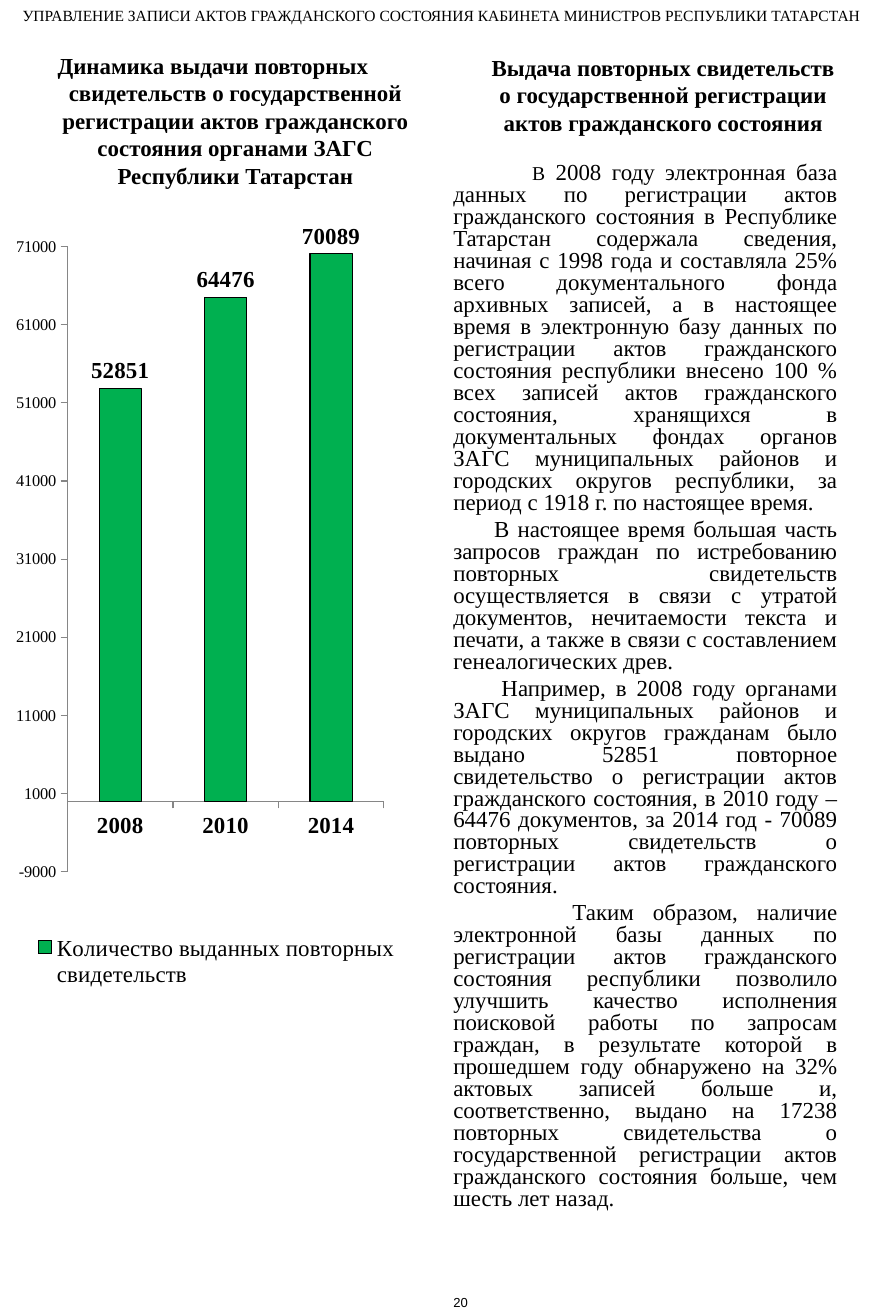
import pptx
import pptx.util
import pptx.chart.data
import pptx.dml.color
import pptx.enum.chart
import pptx.enum.text
import pptx.oxml

Cm = pptx.util.Cm
Pt = pptx.util.Pt
Align = pptx.enum.text.PP_ALIGN
Anchor = pptx.enum.text.MSO_ANCHOR

THEME = {
    "serif": "Times New Roman",
    "sans": "Arial",
    "text": pptx.dml.color.RGBColor(0, 0, 0),
    "bar": pptx.dml.color.RGBColor(0x00, 0xB0, 0x50),
    "axis": pptx.dml.color.RGBColor(0x86, 0x86, 0x86),
    "main_size": 14,
    "small_size": 12,
    "axis_size": 10,
    "header_size": 9.5,
    "page_size": 8,
}

HEADER = "УПРАВЛЕНИЕ ЗАПИСИ АКТОВ ГРАЖДАНСКОГО СОСТОЯНИЯ КАБИНЕТА МИНИСТРОВ РЕСПУБЛИКИ ТАТАРСТАН"
CHART_TITLE = (
    "Динамика выдачи повторных свидетельств о государственной регистрации "
    "актов гражданского состояния органами ЗАГС Республики Татарстан"
)
ARTICLE_TITLE = (
    "Выдача повторных свидетельств\v"
    "о государственной регистрации актов гражданского состояния"
)
PAGE_NUMBER = "20"
FIRST_LETTER = "В"
ARTICLE = [
    (1.7, "В 2008 году электронная база данных по регистрации актов гражданского "
          "состояния в Республике Татарстан содержала сведения, начиная с 1998 года "
          "и составляла 25% всего документального фонда архивных записей, "
          "а в настоящее время в электронную базу данных по регистрации актов "
          "гражданского состояния республики внесено 100 % всех записей актов "
          "гражданского состояния, хранящихся в документальных фондах органов ЗАГС "
          "муниципальных районов и городских округов республики, "
          "за период с 1918 г. по настоящее время."),
    (0.88, "В настоящее время большая часть запросов граждан по истребованию "
           "повторных свидетельств осуществляется в связи с утратой документов, "
           "нечитаемости текста и печати, а также в связи с составлением "
           "генеалогических древ."),
    (1.04, "Например, в 2008 году органами ЗАГС муниципальных районов и городских "
           "округов гражданам было выдано 52851 повторное свидетельство о регистрации "
           "актов гражданского состояния, в 2010 году – 64476 документов, "
           "за 2014 год - 70089 повторных свидетельств о регистрации актов "
           "гражданского состояния."),
    (2.57, "Таким образом, наличие электронной базы данных по регистрации актов "
           "гражданского состояния республики позволило улучшить качество исполнения "
           "поисковой работы по запросам граждан, в результате которой в прошедшем "
           "году обнаружено на 32% актовых записей больше и, соответственно, выдано "
           "на 17238 повторных свидетельства о государственной регистрации актов "
           "гражданского состояния больше, чем шесть лет назад."),
]
SERIES_NAME = "Количество выданных повторных свидетельств"
ISSUED = {"2008": 52851, "2010": 64476, "2014": 70089}

PLOT_LAYOUT = (0.153, 0.031, 0.716, 0.804)
LEGEND_LAYOUT = (0.06, 0.91, 0.86, 0.08)


def set_font(font, size, bold=False, name=THEME["serif"]):
    font.name = name
    font.size = Pt(size)
    font.bold = bold
    font.color.rgb = THEME["text"]


def set_indent(paragraph, first_line, left=0):
    properties = paragraph._p.get_or_add_pPr()
    properties.set("marL", str(Cm(left)))
    properties.set("indent", str(Cm(first_line)))


def add_text(slide, box, lines, size, bold=False, name=THEME["serif"],
             align=Align.CENTER, anchor=Anchor.TOP):
    frame = slide.shapes.add_textbox(*[Cm(length) for length in box]).text_frame
    frame.word_wrap = True
    frame.vertical_anchor = anchor
    frame.text = "\n".join(lines)
    for paragraph in frame.paragraphs:
        paragraph.alignment = align
        for run in paragraph.runs:
            set_font(run.font, size, bold, name)
    return frame


def add_article(slide, box):
    frame = add_text(slide, box, [line for _, line in ARTICLE],
                     THEME["main_size"], align=Align.JUSTIFY)
    for paragraph, (first_line, _) in zip(frame.paragraphs, ARTICLE):
        paragraph.line_spacing = 0.8
        paragraph.space_before = Pt(3.1)
        set_indent(paragraph, first_line)
    opening = frame.paragraphs[0]
    first_run = opening.runs[0]
    rest = opening.add_run()
    rest.text = first_run.text[len(FIRST_LETTER):]
    set_font(rest.font, THEME["main_size"])
    first_run.text = FIRST_LETTER
    first_run.font.size = Pt(THEME["small_size"])


def make_layout(box, target=""):
    places = "".join(f'<c:{key}Mode val="edge"/>' for key in "xy")
    places += "".join(f'<c:{key} val="{value}"/>' for key, value in zip("xywh", box))
    return pptx.oxml.parse_xml(
        '<c:layout xmlns:c="http://schemas.openxmlformats.org/drawingml/2006/chart">'
        f"<c:manualLayout>{target}{places}</c:manualLayout></c:layout>"
    )


def replace_layout(parent, layout, position):
    for old in parent.xpath("c:layout"):
        parent.remove(old)
    parent.insert(position, layout)


def add_issue_chart(slide, box):
    data = pptx.chart.data.CategoryChartData()
    data.categories = list(ISSUED)
    data.add_series(SERIES_NAME, list(ISSUED.values()))
    chart = slide.shapes.add_chart(
        pptx.enum.chart.XL_CHART_TYPE.COLUMN_CLUSTERED,
        *[Cm(length) for length in box], data).chart
    chart.has_title = False
    set_font(chart.font, THEME["main_size"])

    category_axis, value_axis = chart.category_axis, chart.value_axis
    set_font(category_axis.tick_labels.font, THEME["main_size"], True)
    set_font(value_axis.tick_labels.font, THEME["axis_size"])
    value_axis.minimum_scale = -9000
    value_axis.maximum_scale = 71000
    value_axis.major_unit = 10000
    value_axis.has_major_gridlines = False
    for axis in (category_axis, value_axis):
        axis.major_tick_mark = pptx.enum.chart.XL_TICK_MARK.OUTSIDE
        axis.format.line.color.rgb = THEME["axis"]
        axis.format.line.width = Pt(0.75)

    plot = chart.plots[0]
    plot.vary_by_categories = False
    plot.gap_width = 150
    bars = plot.series[0].format
    bars.fill.solid()
    bars.fill.fore_color.rgb = THEME["bar"]
    bars.line.color.rgb = THEME["text"]
    bars.line.width = Pt(0.75)
    plot.has_data_labels = True
    labels = plot.data_labels
    labels.show_value = True
    labels.position = pptx.enum.chart.XL_LABEL_POSITION.OUTSIDE_END
    set_font(labels.font, THEME["main_size"], True)

    chart.has_legend = True
    chart.legend.position = pptx.enum.chart.XL_LEGEND_POSITION.BOTTOM
    chart.legend.include_in_layout = False
    set_font(chart.legend.font, THEME["main_size"])
    plot_area = chart._chartSpace.xpath("c:chart/c:plotArea")[0]
    legend = chart._chartSpace.xpath("c:chart/c:legend")[0]
    replace_layout(plot_area, make_layout(PLOT_LAYOUT, '<c:layoutTarget val="inner"/>'), 0)
    replace_layout(legend, make_layout(LEGEND_LAYOUT), 1)


def main():
    presentation = pptx.Presentation()
    presentation.slide_width = Cm(19.05)
    presentation.slide_height = Cm(28.4)
    slide = presentation.slides.add_slide(presentation.slide_layouts[6])

    add_text(slide, (10.13, 0.99, 8.36, 2.11), [ARTICLE_TITLE],
             THEME["main_size"], bold=True, anchor=Anchor.MIDDLE)
    add_article(slide, (9.53, 3.4, 8.79, 24))
    chart_title = add_text(slide, (0, 0.99, 9.19, 3.25), [CHART_TITLE],
                           THEME["main_size"], bold=True)
    set_indent(chart_title.paragraphs[0], -0.97, left=0.97)
    add_text(slide, (9.53, 27.8, 0.99, 0.6), [PAGE_NUMBER], THEME["page_size"],
             name=THEME["sans"], align=Align.LEFT)
    add_text(slide, (0, 0, 19.05, 0.66), [HEADER], THEME["header_size"])
    add_issue_chart(slide, (0, 4.8, 9.53, 16.79))

    presentation.save("out.pptx")


if __name__ == "__main__":
    main()
